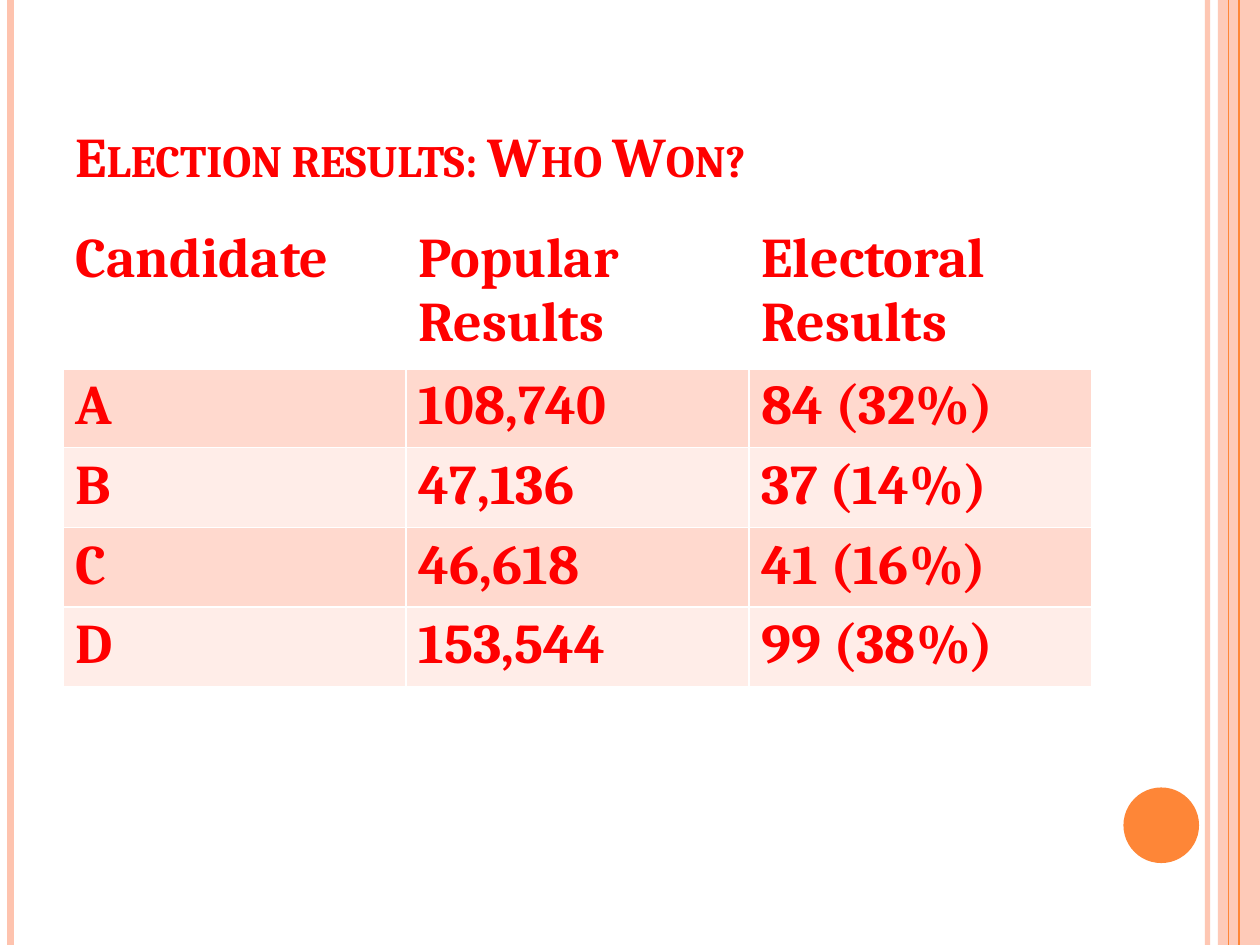
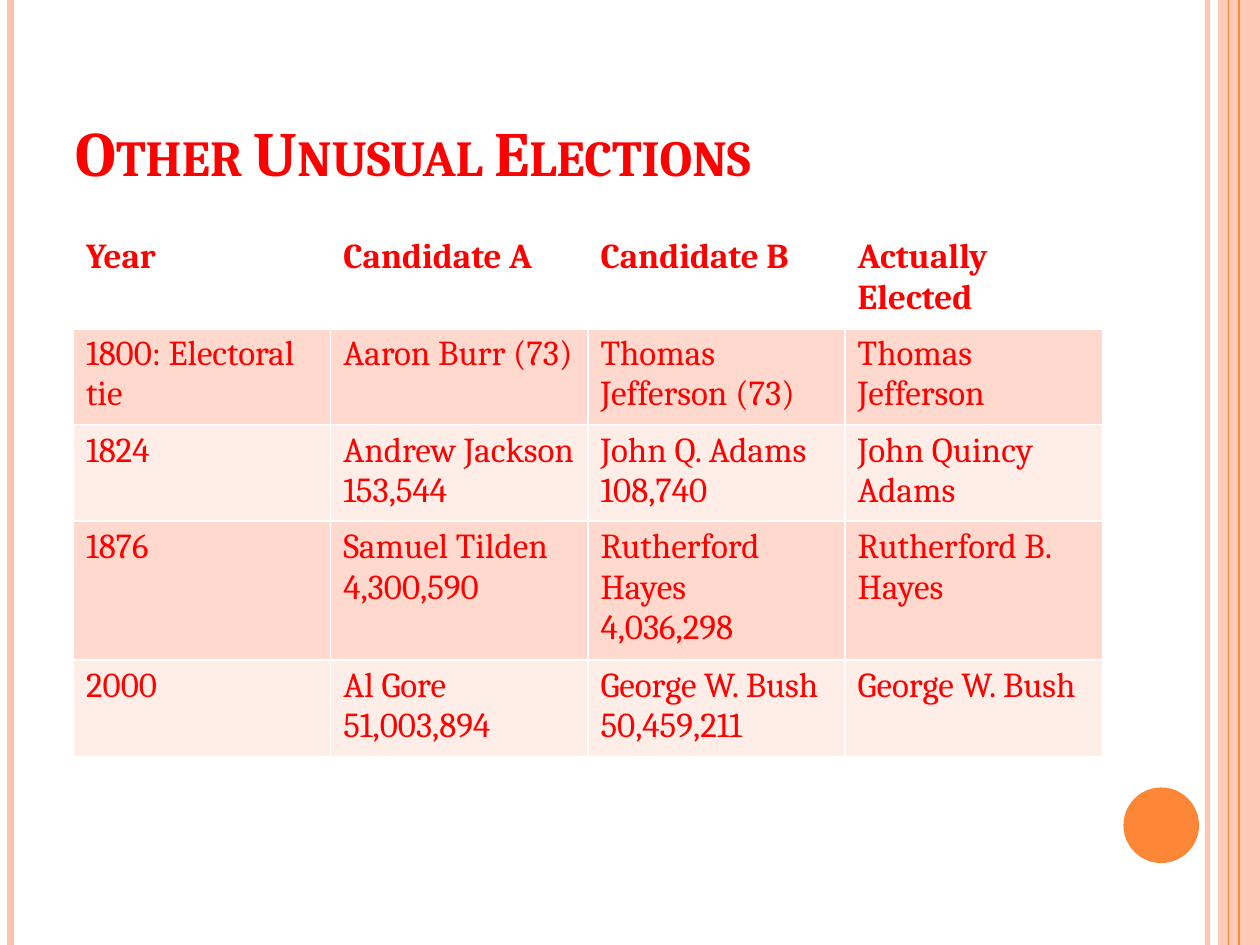
from lxml.etree import SubElement
from pptx import Presentation
from pptx.dml.color import RGBColor
from pptx.enum.shapes import MSO_CONNECTOR, MSO_SHAPE
from pptx.enum.text import MSO_ANCHOR
from pptx.oxml.ns import qn
from pptx.util import Inches, Pt

HUES = {"red": "FF0000", "peach": "FEC3AE", "orange": "FE8637",
        "white": "FFFFFF", "dark": "FFD9CE", "light": "FFEDE8"}
FONT = "Cambria"

deck = Presentation()
deck.slide_width, deck.slide_height = Inches(10), Inches(7.5)

# Grid of 120 columns by 90 rows, in square units
UNIT = deck.slide_width / 120
WIDE, TALL = 98, 90

# Vertical rules: column, colour, points, opacity in percent
RULES = [(115, "peach", 3, 93), (1, "peach", 4.5, 100),
         (118, "orange", 1.5, 100), (117, "orange", 0.75, 100)]

# Title, title size, table column and row, text size, bold body, cells
PAGES = [
    ("Election results: Who Won?", 32, 6, 21, 32, True, [
        ["Candidate", "Popular Results", "Electoral Results"],
        ["A", "108,740", "84 (32%)"],
        ["B", "47,136", "37 (14%)"],
        ["C", "46,618", "41 (16%)"],
        ["D", "153,544", "99 (38%)"]]),
    ("Other Unusual Elections", 36, 7, 22, 20, False, [
        ["Year", "Candidate A", "Candidate B", "Actually Elected"],
        ["1800: Electoral tie", "Aaron Burr (73)",
         "Thomas Jefferson (73)", "Thomas Jefferson"],
        ["1824", "Andrew Jackson\v153,544",
         "John Q. Adams\v108,740", "John Quincy Adams"],
        ["1876", "Samuel Tilden\v4,300,590",
         "Rutherford Hayes\v4,036,298", "Rutherford B. Hayes"],
        ["2000", "Al Gore\v51,003,894",
         "George W. Bush\v50,459,211", "George W. Bush"]]),
]


def grid(*spans):
    return [round(span * UNIT) for span in spans]


def write(frame, text, size, bold, caps="none"):
    frame.text = text
    for run in frame.paragraphs[0].runs:
        run.font.name, run.font.size, run.font.bold = FONT, Pt(size), bold
        run.font.color.rgb = RGBColor.from_string(HUES["red"])
        run._r.get_or_add_rPr().set("cap", caps)


for title, large, left, top, size, bold, cells in PAGES:
    slide = deck.slides.add_slide(deck.slide_layouts[6])
    shapes = slide.shapes

    # Band and disc at the right edge
    for kind, box, hue, alpha in [
            (MSO_SHAPE.RECTANGLE, (116, 0, 4, TALL), "peach", 87),
            (MSO_SHAPE.OVAL, (107, 75, 7.2, 7.2), "orange", 100)]:
        form = shapes.add_shape(kind, *grid(*box))
        form.shadow.inherit = False
        form.line.fill.background()
        form.fill.solid()
        form.fill.fore_color.rgb = RGBColor.from_string(HUES[hue])
        tint = form._element.spPr.find(".//" + qn("a:srgbClr"))
        SubElement(tint, qn("a:alpha"), val=str(alpha * 1000))

    # Rules from top to bottom
    for col, hue, points, alpha in RULES:
        rule = shapes.add_connector(MSO_CONNECTOR.STRAIGHT,
                                    *grid(col, 0, col, TALL))
        rule.line.width = Pt(points)
        rule.line.color.rgb = RGBColor.from_string(HUES[hue])
        props = rule._element.spPr
        SubElement(props.find(".//" + qn("a:srgbClr")), qn("a:alpha"),
                   val=str(alpha * 1000))
        SubElement(props, qn("a:effectLst"))

    # Title
    frame = shapes.add_textbox(*grid(6, 3.6, WIDE, 15)).text_frame
    frame.word_wrap = True
    frame.vertical_anchor = MSO_ANCHOR.BOTTOM
    write(frame, title, large, True, "small")

    # Table: rows grow to fit their text
    rows, cols = len(cells), len(cells[0])
    table = shapes.add_table(rows, cols,
                             *grid(left, top, WIDE, 4.9 * rows)).table
    for r, line in enumerate(cells):
        for c, text in enumerate(line):
            cell = table.cell(r, c)
            write(cell.text_frame, text, size, bold or r == 0)

            # Borders come before the fill
            for side in ("lnL", "lnR", "lnT", "lnB"):
                thick = (r, side) in [(0, "lnB"), (1, "lnT")]
                edge = SubElement(cell._tc.get_or_add_tcPr(), qn("a:" + side),
                                  w=str(Pt(3 if thick else 1)))
                paint = SubElement(edge, qn("a:solidFill"))
                SubElement(paint, qn("a:srgbClr"), val=HUES["white"])

            hue = "white" if r == 0 else ("light", "dark")[r % 2]
            cell.fill.solid()
            cell.fill.fore_color.rgb = RGBColor.from_string(HUES[hue])

deck.save("out.pptx")
